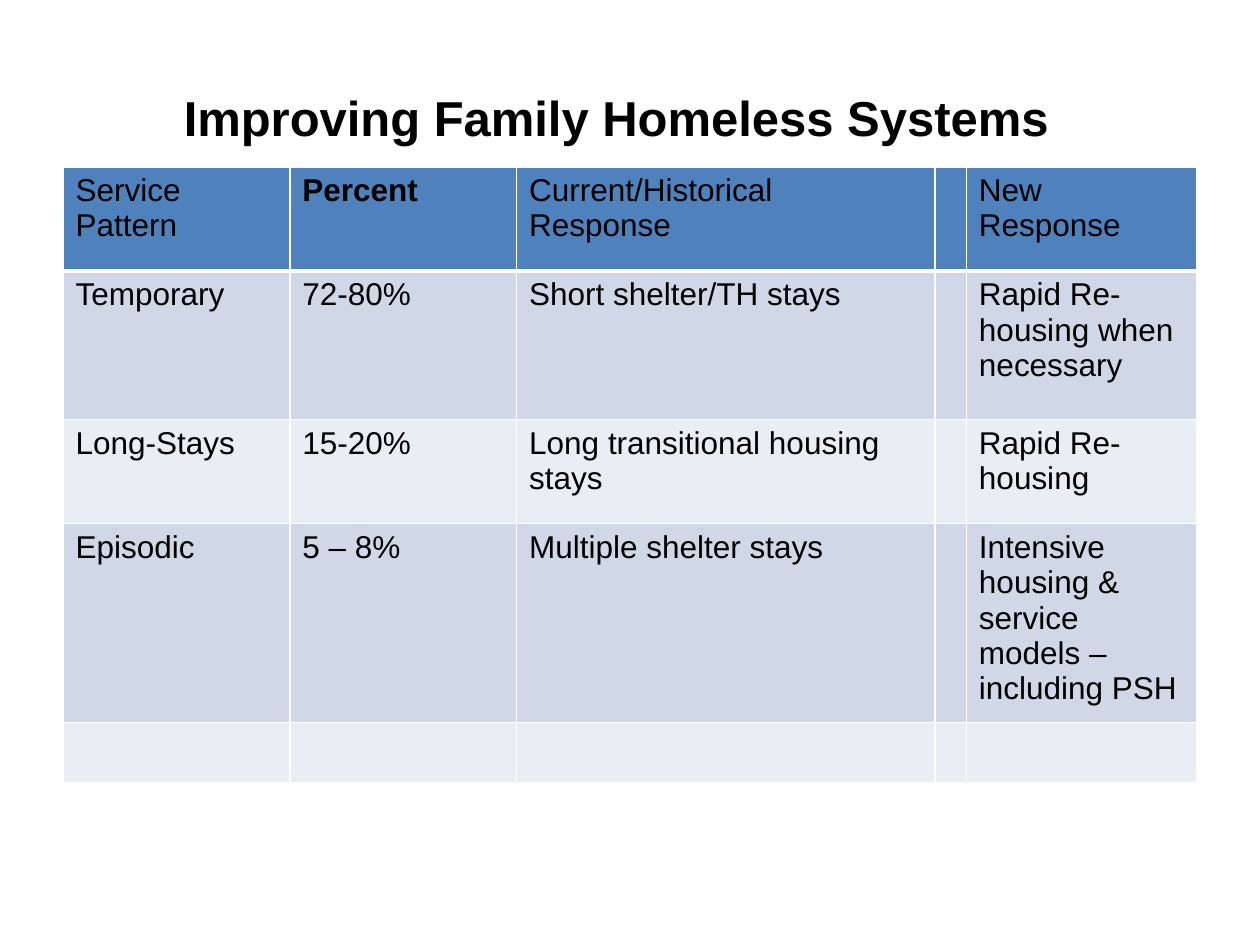
from dataclasses import dataclass

from lxml.etree import SubElement
from pptx import Presentation
from pptx.dml.color import RGBColor
from pptx.enum.text import MSO_ANCHOR, PP_ALIGN
from pptx.oxml.ns import qn
from pptx.slide import Slide
from pptx.table import _Cell
from pptx.text.text import _Paragraph
from pptx.util import Pt


@dataclass(frozen=True)
class Theme:
    font: str = "Arial"
    title_size: float = 28
    body_size: float = 18
    text: str = "000000"
    header: str = "4F81BD"
    bands: tuple[str, str] = ("D0D8E8", "E9EDF4")
    border: str = "FFFFFF"
    border_width: float = 1
    header_rule: float = 3


@dataclass(frozen=True)
class Pattern:
    name: str = ""
    percent: str = ""
    current: str = ""
    new: str = ""

    def cells(self) -> tuple[str, ...]:
        """Row texts, with an empty spacer column before the new response."""
        return self.name, self.percent, self.current, "", self.new


THEME = Theme()
COL_WIDTHS = (129.6, 129.6, 239.04, 18, 131.76)
ROW_HEIGHTS = (59.5, 85, 59.5, 113.5, 34.56)
PATTERNS = (
    Pattern("Service Pattern", "Percent", "Current/Historical Response", "New Response"),
    Pattern("Temporary", "72-80%", "Short shelter/TH stays", "Rapid Re-housing when necessary"),
    Pattern("Long-Stays", "15-20%", "Long transitional housing stays", "Rapid Re-housing"),
    Pattern("Episodic", "5 – 8%", "Multiple shelter stays",
            "Intensive housing & service models – including PSH"),
    Pattern(),
)


def add_text(p: _Paragraph, text: str, size: float, bold: bool) -> None:
    p.font.size = Pt(size)
    if not text:
        return
    r = p.add_run()
    r.text = text
    r.font.name = THEME.font
    r.font.size = Pt(size)
    r.font.bold = bold
    r.font.color.rgb = RGBColor.from_string(THEME.text)


def set_borders(cell: _Cell, bottom: float) -> None:
    tc_pr = cell._tc.get_or_add_tcPr()
    widths = {"a:lnL": THEME.border_width, "a:lnR": THEME.border_width,
              "a:lnT": THEME.border_width, "a:lnB": bottom}
    for i, (tag, width) in enumerate(widths.items()):
        ln = SubElement(tc_pr, qn(tag), w=str(Pt(width)))
        fill = SubElement(ln, qn("a:solidFill"))
        SubElement(fill, qn("a:srgbClr"), val=THEME.border)
        tc_pr.insert(i, ln)  # borders come before the cell fill


def add_title(s: Slide, text: str) -> None:
    title = s.shapes.title
    title.left, title.top, title.width, title.height = Pt(36), Pt(21.6), Pt(648), Pt(90)
    tf = title.text_frame
    tf.vertical_anchor = MSO_ANCHOR.MIDDLE
    tf.margin_right = Pt(23)  # sets the title slightly left of centre
    p = tf.paragraphs[0]
    p.alignment = PP_ALIGN.CENTER
    add_text(p, text, THEME.title_size, True)


def add_pattern_table(s: Slide) -> None:
    table = s.shapes.add_table(len(PATTERNS), len(COL_WIDTHS), Pt(36), Pt(95.3),
                               Pt(sum(COL_WIDTHS)), Pt(sum(ROW_HEIGHTS))).table
    for col, width in zip(table.columns, COL_WIDTHS):
        col.width = Pt(width)
    for i, (row, height, pattern) in enumerate(zip(table.rows, ROW_HEIGHTS, PATTERNS)):
        row.height = Pt(height)
        is_header = i == 0
        color = THEME.header if is_header else THEME.bands[(i - 1) % 2]
        for cell, text in zip(row.cells, pattern.cells()):
            cell.fill.solid()
            cell.fill.fore_color.rgb = RGBColor.from_string(color)
            set_borders(cell, THEME.header_rule if is_header else THEME.border_width)
            add_text(cell.text_frame.paragraphs[0], text, THEME.body_size, text == "Percent")


def main() -> None:
    prs = Presentation()
    prs.slide_width, prs.slide_height = Pt(720), Pt(540)
    s = prs.slides.add_slide(prs.slide_layouts[5])
    add_title(s, "Improving Family Homeless Systems")
    add_pattern_table(s)
    prs.save("out.pptx")


if __name__ == "__main__":
    main()
